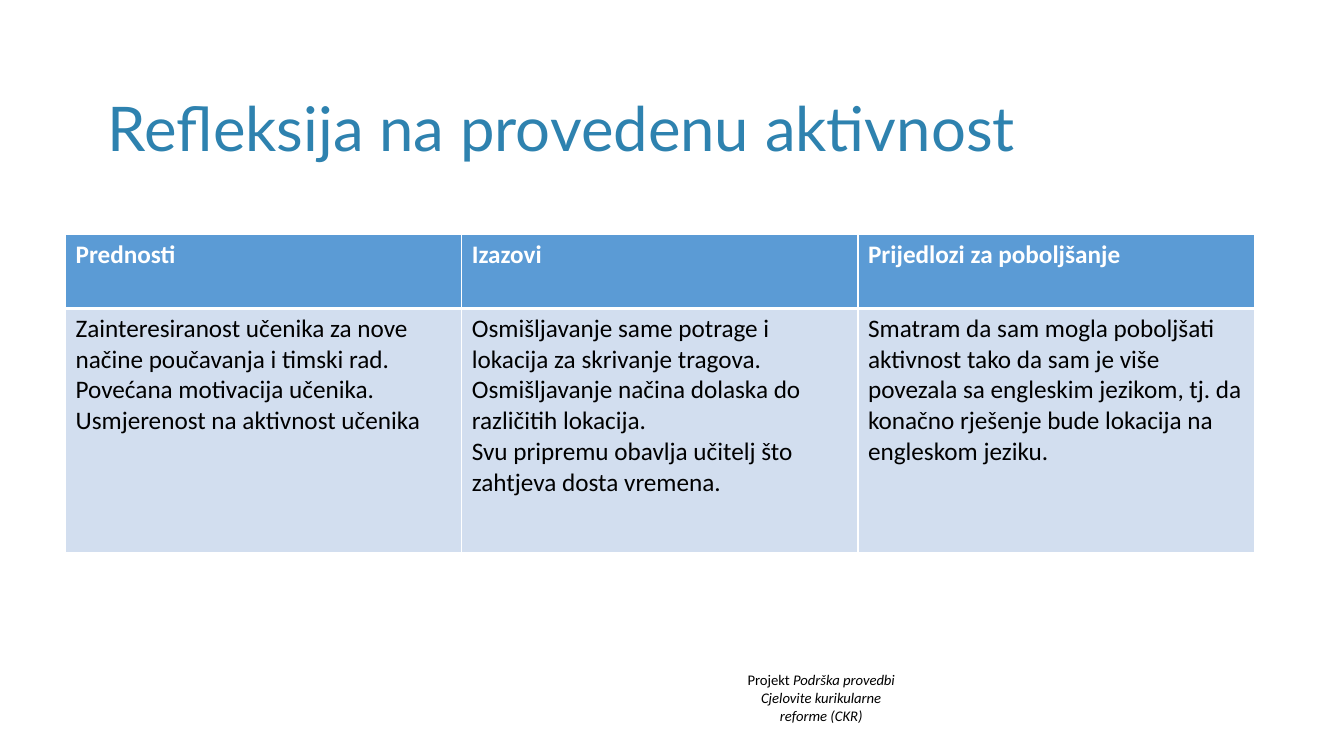
from lxml.etree import SubElement
from pptx import Presentation
from pptx.dml.color import RGBColor
from pptx.enum.text import MSO_ANCHOR as Anchor, MSO_AUTO_SIZE as Fit, PP_ALIGN as Align
from pptx.oxml.ns import qn
from pptx.util import Inches, Pt

WHITE = RGBColor(0xFF, 0xFF, 0xFF)
BLACK = RGBColor(0x00, 0x00, 0x00)
TEAL = RGBColor(0x2E, 0x82, 0xAF)
BLUE = RGBColor(0x5B, 0x9B, 0xD5)
PALE = RGBColor(0xD2, 0xDE, 0xEF)

HEADS = ["Prednosti", "Izazovi", "Prijedlozi za poboljšanje"]
BODY = [
    ["Zainteresiranost učenika za nove načine poučavanja i timski rad.",
     "Povećana motivacija učenika.",
     "Usmjerenost na aktivnost učenika"],
    ["Osmišljavanje same potrage i lokacija za skrivanje tragova.",
     "Osmišljavanje načina dolaska do različitih lokacija.",
     "Svu pripremu obavlja učitelj što zahtjeva dosta vremena."],
    ["Smatram da sam mogla poboljšati aktivnost tako da sam je više "
     "povezala sa engleskim jezikom, tj. da konačno rješenje bude "
     "lokacija na engleskom jeziku."],
]
# Each line holds its runs as (text, italic)
NOTE = [
    [("Projekt ", False), ("Podrška provedbi", True)],
    [("Cjelovite kurikularne\vreforme (CKR)", True)],
]


class Page:
    """Style and current slide."""

    def __init__(self, deck):
        self.slide = deck.slides.add_slide(deck.slide_layouts[5])
        self.base = {"name": "Calibri", "size": Pt(18), "bold": False}

    def style(self, font, color, **extra):
        for key, value in {**self.base, **extra}.items():
            setattr(font, key, value)
        font.color.rgb = color

    def title(self, text, box):
        shape = self.slide.shapes.title
        for key, value in zip(("left", "top", "width", "height"), box):
            setattr(shape, key, Inches(value))
        frame = shape.text_frame
        frame.text = text
        for key, value in {"word_wrap": True, "auto_size": Fit.NONE,
                           "vertical_anchor": Anchor.MIDDLE}.items():
            setattr(frame, key, value)
        para = frame.paragraphs[0]
        para.alignment, para.line_spacing = Align.LEFT, 0.9
        self.style(para.runs[0].font, TEAL, name="Lato", size=Pt(44))

    def note(self, lines, box, size):
        shape = self.slide.shapes.add_textbox(*map(Inches, box))
        frame = shape.text_frame
        frame.word_wrap = True
        frame.auto_size = Fit.SHAPE_TO_FIT_TEXT
        for i, line in enumerate(lines):
            para = frame.add_paragraph() if i else frame.paragraphs[0]
            para.alignment = Align.CENTER
            for text, slant in line:
                for j, part in enumerate(text.split("\v")):
                    if j:
                        para.add_line_break()
                    run = para.add_run()
                    run.text = part
                    self.style(run.font, BLACK, size=Pt(size), italic=slant)
            # Line breaks take the text size
            for mark in para._p.findall(qn("a:br")):
                SubElement(mark, qn("a:rPr"), sz=str(int(size * 100)))

    def edges(self, cell, low):
        props = cell._tc.get_or_add_tcPr()
        sides = {"a:lnL": 1, "a:lnR": 1, "a:lnT": 1, "a:lnB": low}
        for i, (tag, wide) in enumerate(sides.items()):
            line = SubElement(props, qn(tag), w=str(Pt(wide)))
            fill = SubElement(line, qn("a:solidFill"))
            SubElement(fill, qn("a:srgbClr"), val=str(WHITE))
            props.insert(i, line)

    def cell(self, cell, lines, fill, color, bold, low):
        cell.text = "\n".join(lines)
        cell.fill.solid()
        cell.fill.fore_color.rgb = fill
        self.edges(cell, low)
        for para in cell.text_frame.paragraphs:
            self.style(para.runs[0].font, color, bold=bold)

    def table(self, heads, body, spot, wide, highs):
        cols = len(heads)
        size = (wide * cols, sum(highs))
        grid = self.slide.shapes.add_table(
            len(highs), cols, *map(Inches, spot + size)).table
        grid.horz_banding = False
        for row, high in zip(grid.rows, highs):
            row.height = Inches(high)
        for i, (head, lines) in enumerate(zip(heads, body)):
            grid.columns[i].width = Inches(wide)
            self.cell(grid.cell(0, i), [head], BLUE, WHITE, True, 3)
            self.cell(grid.cell(1, i), lines, PALE, BLACK, False, 1)


def main():
    deck = Presentation()
    deck.slide_width, deck.slide_height = Inches(13.33), Inches(7.5)
    page = Page(deck)
    # Project footer
    page.note(NOTE, (6.99, 6.61, 2.31, 0.63), 10.5)
    # Heading
    page.title("Refleksija na provedenu aktivnost", (0.97, 0.58, 11.5, 1.45))
    # Reflection table
    page.table(HEADS, BODY, (0.65, 2.33), 3.93, (0.73, 2.42))
    deck.save("out.pptx")


if __name__ == "__main__":
    main()
